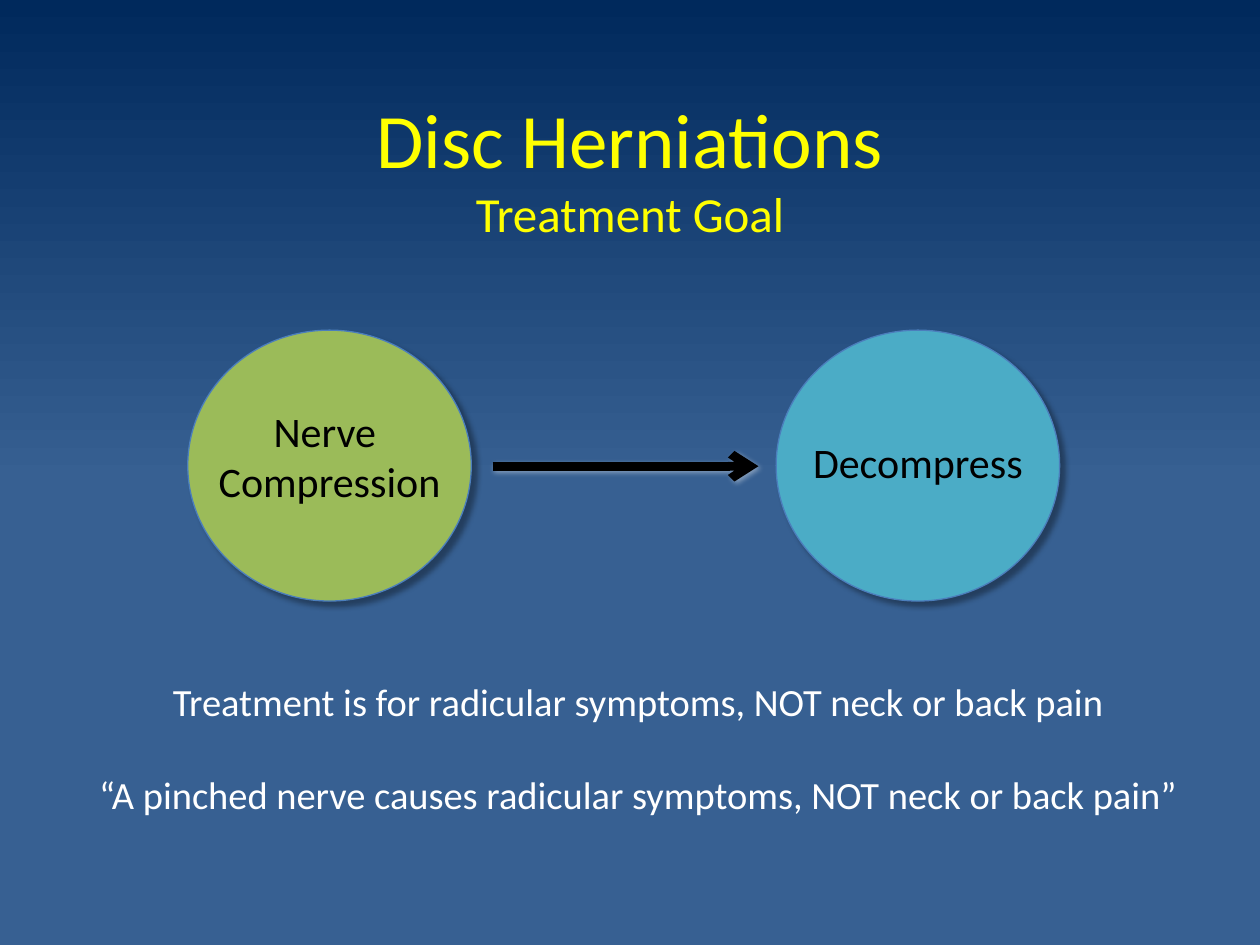
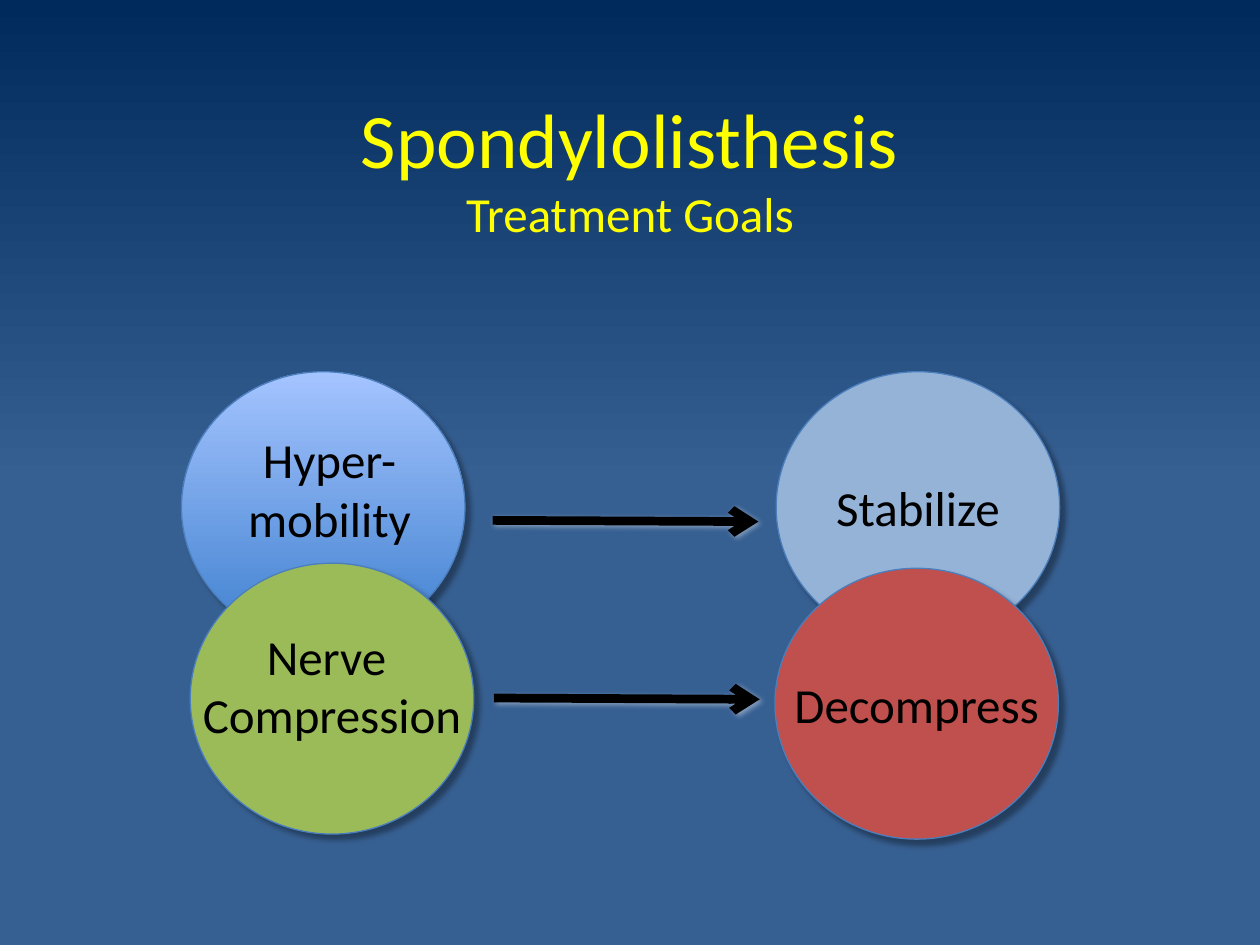
from lxml import etree
from pptx import Presentation
from pptx.dml.color import RGBColor
from pptx.enum.shapes import MSO_CONNECTOR as Connector, MSO_SHAPE as Preset
from pptx.enum.text import MSO_ANCHOR as Anchor, PP_ALIGN as Align
from pptx.oxml import parse_xml
from pptx.oxml.ns import nsdecls, qn
from pptx.util import Inches, Pt

# Grid: 100 columns by 75 rows of square cells
CELL = Inches(0.1)
COLUMNS, ROWS = 100, 75
CIRCLE_WIDTH, CIRCLE_HEIGHT = 22.5, 21.5
ARROW_LENGTH = 21.1

FONT = "Calibri"
YELLOW, WHITE, BLACK = "FFFF00", "FFFFFF", "000000"
NAVY, BLUE, OUTLINE = "00295C", "376092", "4B7EBC"
GREEN, TEAL, PALE_BLUE, RED = "9BBB59", "4BACC6", "95B3D7", "C0504D"
HYPER_GRADIENT = [(0, "3F80CE"), (1, "A4C4FF")]
BACKGROUND_GRADIENT = [(0.49, BLUE), (1, NAVY)]


def color(hex_string):
    return RGBColor.from_string(hex_string)


def cells(*counts):
    return [round(count * CELL) for count in counts]


def paint(fill, paint_value):
    """Fill with one colour, or with gradient stops running upwards."""
    if isinstance(paint_value, str):
        fill.solid()
        fill.fore_color.rgb = color(paint_value)
        return
    fill.gradient()
    fill.gradient_angle = 90
    for stop, (position, hex_string) in zip(fill.gradient_stops, paint_value):
        stop.position = position
        stop.color.rgb = color(hex_string)


def add_shadow(shape, hex_string, opacity, blur, distance, angle):
    shape._element.spPr.append(parse_xml(
        f'<a:effectLst {nsdecls("a")}><a:outerShdw blurRad="{Pt(blur)}" '
        f'dist="{Pt(distance)}" dir="{angle * 60000}" algn="ctr" rotWithShape="0">'
        f'<a:srgbClr val="{hex_string}"><a:alpha val="{opacity * 1000}"/></a:srgbClr>'
        f'</a:outerShdw></a:effectLst>'))


def add_text(slide, box, paragraphs, hex_string, gap=0):
    """Each paragraph is a list of (text, size) runs, split by line breaks."""
    frame = slide.shapes.add_textbox(*cells(*box)).text_frame
    frame.word_wrap = True
    frame.vertical_anchor = Anchor.MIDDLE
    for index, runs in enumerate(paragraphs):
        paragraph = frame.add_paragraph() if index else frame.paragraphs[0]
        paragraph.alignment = Align.CENTER
        if index and gap:
            paragraph.space_before = Pt(gap)
        for run_index, (text, size) in enumerate(runs):
            if run_index:
                paragraph.add_line_break()
            run = paragraph.add_run()
            run.text = text
            run.font.name = FONT
            run.font.size = Pt(size)
            run.font.color.rgb = color(hex_string)


def add_title(slide, title, subtitle):
    add_text(slide, (5, 7, COLUMNS - 10, 12.5), [[(title, 44), (subtitle, 28)]], YELLOW)


def add_circle(slide, left, top, fill, lines, size, caption_width=CIRCLE_WIDTH,
               shift=(0, 0), rows=None):
    """Place a circle and its caption, shifted from the circle's centre."""
    circle = slide.shapes.add_shape(
        Preset.OVAL, *cells(left, top, CIRCLE_WIDTH, CIRCLE_HEIGHT))
    paint(circle.fill, fill)
    circle.line.color.rgb = color(OUTLINE)
    circle.line.width = Pt(0.75)
    add_shadow(circle, BLACK, 35, 3.1, 4, 45)

    caption_height = 1 + (rows or len(lines)) * size / 6
    caption_left = left + (CIRCLE_WIDTH - caption_width) / 2 + shift[0]
    caption_top = top + (CIRCLE_HEIGHT - caption_height) / 2 + shift[1]
    add_text(slide, (caption_left, caption_top, caption_width, caption_height),
             [[(line, size)] for line in lines], BLACK)


def add_arrow(slide, left, top, drop=0):
    arrow = slide.shapes.add_connector(
        Connector.STRAIGHT, *cells(left, top, left + ARROW_LENGTH, top + drop))
    arrow.line.color.rgb = color(BLACK)
    arrow.line.width = Pt(5)
    etree.SubElement(arrow.line._get_or_add_ln(), qn("a:tailEnd"), type="arrow")
    add_shadow(arrow, WHITE, 38, 3.1, 1.6, 40)


def build_herniations(slide):
    add_title(slide, "Disc Herniations", "Treatment Goal")
    # Problem and goal
    top = 26.2
    add_circle(slide, 61.6, top, TEAL, ["Decompress"], 24, shift=(0, -0.3))
    add_circle(slide, 14.9, top, GREEN, ["Nerve ", "Compression"], 24, 25.8, (0, -0.8))
    add_arrow(slide, 39.1, 37)
    # Remarks
    remarks = ["Treatment is for radicular symptoms, NOT neck or back pain",
               "“A pinched nerve causes radicular symptoms, NOT neck or back pain”"]
    add_text(slide, (3.5, 53.3, 94.3, 12.1), [[(remark, 22)] for remark in remarks],
             WHITE, gap=26.5)


def build_spondylolisthesis(slide):
    add_title(slide, "Spondylolisthesis", "Treatment Goals")
    # Upper pair
    top = 29.5
    add_circle(slide, 61.6, top, PALE_BLUE, ["Stabilize"], 28, 16.6)
    add_arrow(slide, 39.1, 41.3, 0.1)
    add_circle(slide, 14.4, top, HYPER_GRADIENT, ["Hyper-mobility"], 28, 23.3,
               (0.5, -1.5), rows=2)
    # Lower pair, overlapping the upper one
    add_arrow(slide, 39.2, 55.4, 0.1)
    add_circle(slide, 61.5, 45.1, RED, ["Decompress"], 28)
    add_circle(slide, 15.1, 44.7, GREEN, ["Nerve ", "Compression"], 28, 25.8, (0, -1.1))


def main():
    presentation = Presentation()
    presentation.slide_width, presentation.slide_height = cells(COLUMNS, ROWS)
    paint(presentation.slide_master.background.fill, BACKGROUND_GRADIENT)
    blank = presentation.slide_layouts[6]
    for build in (build_herniations, build_spondylolisthesis):
        build(presentation.slides.add_slide(blank))
    presentation.save("out.pptx")


if __name__ == "__main__":
    main()
